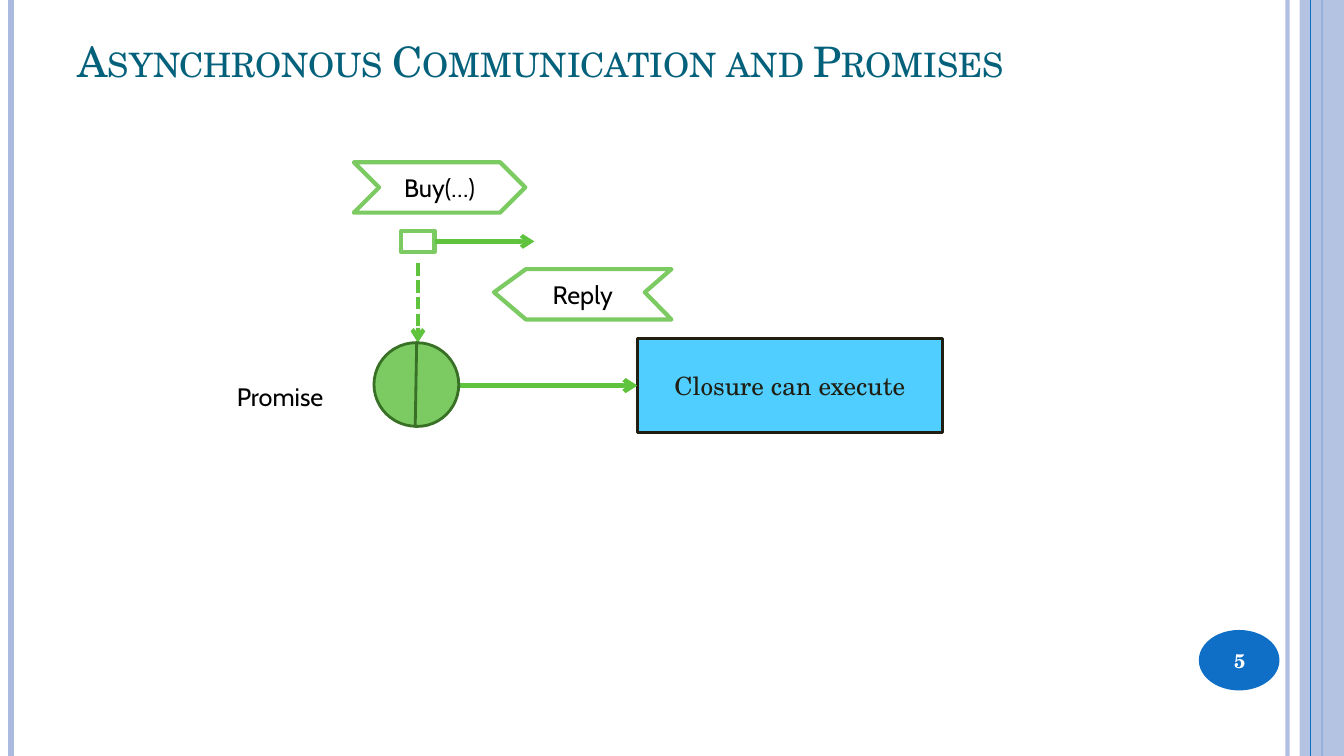
import pptx
import pptx.util
import pptx.dml.color
import pptx.enum.dml
import pptx.enum.shapes
import pptx.enum.text
import pptx.oxml.ns
import lxml.etree

WIDE, HIGH = 133.3, 75
SANS, SERIF = "Cabin", "TeX Gyre Schola"
PALE, BLUE, GREEN, LEAF, DARK = "ABBBDF", "0F6FC6", "7CCA62", "5FC33E", "387026"
SHAPE = pptx.enum.shapes.MSO_SHAPE
ALIGN = pptx.enum.text.PP_ALIGN
ANCHOR = pptx.enum.text.MSO_ANCHOR


def cell(count):
    """Turn grid cells of a tenth of an inch into a length."""
    return pptx.util.Inches(count / 10)


def tint(part, color):
    """Give a fill or font its colour."""
    if hasattr(part, "solid"):
        part.solid()
        part = part.fore_color
    else:
        part = part.color
    part.rgb = pptx.dml.color.RGBColor.from_string(color)


def add(parent, tag, **attrs):
    """Append a drawing element."""
    return lxml.etree.SubElement(parent, pptx.oxml.ns.qn(tag), **attrs)


def fade(item, share):
    """Make the colours of an item see-through."""
    for color in list(item.element.spPr.iter(pptx.oxml.ns.qn("a:srgbClr"))):
        add(color, "a:alpha", val=str(share * 1000))


def write(item, text, size=18, font=SANS, color="000000", bold=False,
          align=ALIGN.CENTER, anchor=ANCHOR.MIDDLE, wrap=True, small=False):
    """Put formatted text into a shape."""
    frame = item.text_frame
    frame.word_wrap = wrap
    frame.vertical_anchor = anchor
    para = frame.paragraphs[0]
    para.alignment = align
    run = para.add_run()
    run.text = text
    run.font.size = pptx.util.Pt(size)
    run.font.name = font
    run.font.bold = bold
    tint(run.font, color)
    if small:
        run.font._element.set("cap", "small")


def style(item, fill=None, line=None, width=3):
    """Set fill and outline and drop the shadow."""
    item.shadow.inherit = False
    if fill:
        tint(item.fill, fill)
    else:
        item.fill.background()
    if line:
        tint(item.line.fill, line)
        item.line.width = pptx.util.Pt(width)
    else:
        item.line.fill.background()
    return item


def shape(slide, kind, box, **look):
    """Add a preset shape."""
    return style(slide.shapes.add_shape(kind, *map(cell, box)), **look)


def label(slide, box, text, **look):
    """Add a text box."""
    write(slide.shapes.add_textbox(*map(cell, box)), text, **look)


def link(slide, start, end, color=LEAF, width=3, dash=False, arrow=True):
    """Add a straight line or arrow."""
    line = slide.shapes.add_connector(
        pptx.enum.shapes.MSO_CONNECTOR.STRAIGHT, *map(cell, start + end))
    tint(line.line.fill, color)
    line.line.width = pptx.util.Pt(width)
    if dash:
        line.line.dash_style = pptx.enum.dml.MSO_LINE.SQUARE_DOT
    if arrow:
        add(line.line._get_or_add_ln(), "a:tailEnd", type="arrow")
    add(line.element.spPr, "a:effectLst")
    return line


def frame(slide, box):
    """Draw the side rules, right band and page number."""
    left, top, wide, high = box
    right, base = left + wide, top + high

    def rule(col, color, width):
        return link(slide, (col, top), (col, base), color, width, arrow=False)

    fade(rule(right - 5.6, PALE, 3), 93)
    rule(left + 1.1, PALE, 4.5)
    rule(right - 2.2, BLUE, 1.5)
    fade(shape(slide, SHAPE.RECTANGLE, (right - 4.4, top, 4.4, high), fill=PALE), 87)
    rule(right - 3.3, BLUE, 0.75)
    shape(slide, SHAPE.OVAL, (right - 14.4, base - 12.5, 8, 6), fill=BLUE)
    label(slide, (right - 14.8, base - 12.3, 8.9, 5.7), "5",
          size=14, font=SERIF, color="FFFFFF", bold=True)


def head(slide, box):
    """Place the title."""
    title = slide.shapes.title
    title.left, title.top, title.width, title.height = map(cell, box)
    write(title, "Asynchronous Communication and Promises", size=30, font=SERIF,
          color="04617B", align=ALIGN.LEFT, anchor=ANCHOR.TOP, small=True)


def reply(slide, box):
    """Draw the reply tag that points left."""
    left, top, wide, high = box
    shares = [(0.18, 0), (1, 0), (0.85, 0.46), (1, 1), (0.18, 1), (0, 0.46)]
    spots = [(cell(left + wide * x), cell(top + high * y)) for x, y in shares]
    path = slide.shapes.build_freeform(*spots[0], scale=1.0)
    path.add_line_segments(spots[1:], close=True)
    write(style(path.convert_to_shape(), "FFFFFF", GREEN), "Reply")


def half(slide, box, turn):
    """Draw one half of the promise disc."""
    part = shape(slide, SHAPE.CHORD, box, fill=GREEN, line=DARK, width=2)
    part.adjustments[0] = 53.39
    part.adjustments[1] = 163.83
    part.rotation = turn


def flow(slide, box):
    """Draw the message, its promise and the closure."""
    left, top, wide, high = box
    axis, mid = left + 18.95, top + 22.15
    buy = shape(slide, SHAPE.CHEVRON, (left + 12.6, top, 17, 5),
                fill="FFFFFF", line=GREEN)
    write(buy, "Buy(…)")
    half(slide, (left + 14.6, top + 17.9, 8.4, 8.3), 0)
    call = shape(slide, SHAPE.RECTANGLE, (axis - 1.65, top + 6.8, 3.3, 2.1), line=GREEN)
    sent = link(slide, (axis + 1.65, top + 7.85), (left + 30.5, top + 7.85))
    sent.begin_connect(call, 3)
    done = shape(slide, SHAPE.RECTANGLE, (left + wide - 30.3, top + high - 9.3, 30.3, 9.3),
                 fill="4FCEFF", line="1F1E11", width=2)
    write(done, "Closure can execute", font=SERIF, color="1F1E11")
    for start, dash in ((axis, True), (axis + 1.65, False)):
        line = link(slide, (start, mid), (left + wide - 30.3, mid), dash=dash)
        line.end_connect(done, 1)
    label(slide, (left, top + 21.2, 13.9, 5), "Promise",
          align=ALIGN.LEFT, anchor=ANCHOR.TOP, wrap=False)
    reply(slide, (left + 26.5, top + 10.6, 17.6, 5))
    link(slide, (axis, top + 10), (axis, top + 17.9), dash=True)
    half(slide, (left + 14.8, top + 17.9, 8.2, 8.3), 180)


def main():
    """Build and save the slide."""
    deck = pptx.Presentation()
    deck.slide_width, deck.slide_height = cell(WIDE), cell(HIGH)
    slide = deck.slides.add_slide(deck.slide_layouts[5])
    tint(slide.background.fill, "FFFFFF")
    frame(slide, (0, 0, WIDE, HIGH))
    head(slide, (6.7, 3, 108.9, 12.5))
    flow(slide, (22.5, 16.1, 71, 26.8))
    deck.save("out.pptx")


if __name__ == "__main__":
    main()
